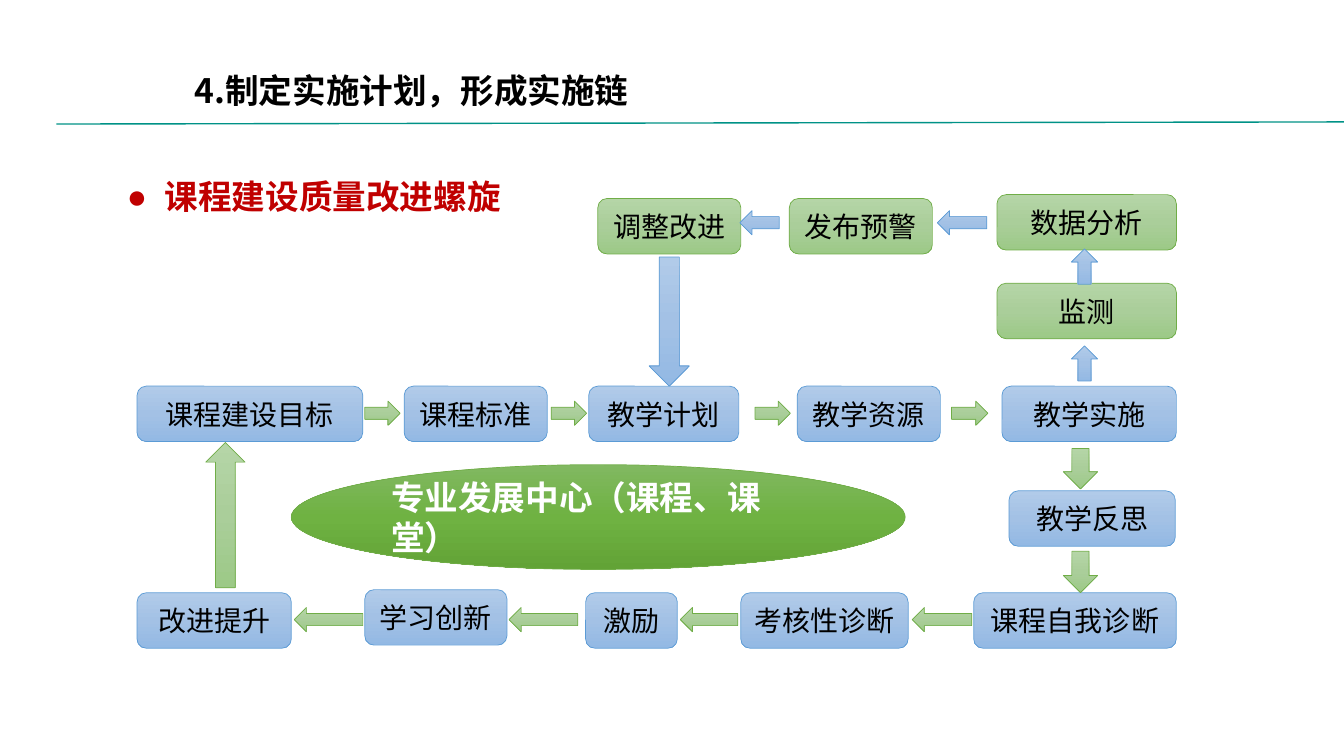
from copy import deepcopy

from lxml import etree
from pptx import Presentation
from pptx.dml.color import RGBColor
from pptx.enum import shapes, text
from pptx.oxml import ns
from pptx.util import Pt

CJK = "Noto Sans CJK SC"
BOX_HEIGHT = 39.6
ARROW_HEIGHT = 17.3
KIND = shapes.MSO_SHAPE
LEFT, RIGHT, UP, DOWN = KIND.LEFT_ARROW, KIND.RIGHT_ARROW, KIND.UP_ARROW, KIND.DOWN_ARROW

# Outline, then gradient from top to bottom
BLUE = ("5B9BD5", "B1CBE9", "A3C1E5", "93B9E4")
GREEN = ("70AD47", "B5D5A7", "AACE9A", "9CC987")
DEEP_GREEN = ("70AD47", "81B861", "6FB242", "62A336")

TITLE = "4.制定实施计划，形成实施链"
HEADING = "课程建设质量改进螺旋"
CENTRE = "专业发展中心（课程、课堂）"

# Colours, top, then (text, left, width)
BOX_ROWS = [
    (BLUE, 275.8, [("课程建设目标", 97.9, 161.3), ("课程标准", 288.7, 102.2),
                   ("教学计划", 420.5, 107.3), ("教学资源", 569.5, 102.2),
                   ("教学实施", 715.7, 124.6)]),
    (BLUE, 350.6, [("教学反思", 720.7, 118.8)]),
    (BLUE, 423.4, [("课程自我诊断", 695.5, 144.7), ("考核性诊断", 529.2, 119.5),
                   ("激励", 418.3, 65.5), ("改进提升", 97.9, 110.2)]),
    (BLUE, 421.2, [("学习创新", 260.6, 101.5)]),
    (GREEN, 202.3, [("监测", 712.1, 128.2)]),
    (GREEN, 139, [("数据分析", 712.1, 128.2)]),
    (GREEN, 141.8, [("发布预警", 563.8, 102.2), ("调整改进", 427, 102.2)]),
]
# Kind, colours, middle height, then (left, width)
ARROW_ROWS = [
    (RIGHT, GREEN, 295.2, [(260.6, 25.2), (393.8, 25.2), (539.3, 25.2), (679.7, 25.9)]),
    (LEFT, GREEN, 442.6, [(651.6, 42.5), (486, 41), (363.6, 49), (210.2, 49)]),
    (LEFT, BLUE, 159.1, [(669.6, 35.3), (528.5, 28.1)]),
]
# Kind, colours, middle across, width, then (top, height)
ARROW_COLUMNS = [
    (UP, BLUE, 774.7, 18.7, [(247, 25.2), (177.8, 25.2)]),
    (DOWN, GREEN, 771.8, 24.5, [(320.4, 28.8), (393.8, 29.5)]),
    (DOWN, BLUE, 478.1, 28.8, [(183.6, 92.2)]),
    (UP, GREEN, 161, 28.1, [(316.1, 103.7)]),
]


def colour(value):
    return RGBColor.from_string(value)


def write(box, words, size=20, ink="000000", bold=False, font=CJK,
          align=text.PP_ALIGN.LEFT, anchor=text.MSO_ANCHOR.MIDDLE):
    frame = box.text_frame
    frame.word_wrap = True
    frame.vertical_anchor = anchor
    para = frame.paragraphs[0]
    para.alignment = align
    span = para.add_run()
    span.text = words
    span.font.size = Pt(size)
    span.font.bold = bold
    span.font.name = font
    span.font.color.rgb = colour(ink)
    etree.SubElement(span.font._element, ns.qn("a:ea"), typeface=CJK)
    return para


def draw(page, kind, colours, left, top, width, height):
    """Add a preset shape with a three-stop vertical gradient."""
    shape = page.shapes.add_shape(kind, Pt(left), Pt(top), Pt(width), Pt(height))
    shape.shadow.inherit = False
    outline, *tones = colours
    shape.line.color.rgb = colour(outline)
    shape.line.width = Pt(0.5)
    shape.fill.gradient()
    shape.fill.gradient_angle = 270
    stop_list = shape._element.spPr.find(".//" + ns.qn("a:gsLst"))
    stop_list.insert(1, deepcopy(stop_list[0]))
    for stop, tone, position in zip(shape.fill.gradient_stops, tones, (0, 0.5, 1)):
        stop.color.rgb = colour(tone)
        stop.position = position
    return shape


def add_words(page, words, left, top, width, height, **style):
    box = page.shapes.add_textbox(Pt(left), Pt(top), Pt(width), Pt(height))
    return write(box, words, size=24, bold=True, anchor=text.MSO_ANCHOR.TOP, **style)


def add_bullet(para, mark, indent):
    props = para._p.get_or_add_pPr()
    props.set("marL", str(Pt(indent)))
    props.set("indent", str(-Pt(indent)))
    etree.SubElement(props, ns.qn("a:buFont"), typeface="Arial")
    etree.SubElement(props, ns.qn("a:buChar"), char=mark)


def add_rule(page, start, end):
    rule = page.shapes.add_connector(shapes.MSO_CONNECTOR.STRAIGHT,
                                     *map(Pt, start), *map(Pt, end))
    rule.line.color.rgb = colour("009287")
    rule.line.width = Pt(1)
    etree.SubElement(rule._element.spPr, ns.qn("a:effectLst"))


def main():
    deck = Presentation()
    deck.slide_width, deck.slide_height = Pt(960), Pt(540)
    page = deck.slides.add_slide(deck.slide_layouts[6])

    for colours, top, boxes in BOX_ROWS:
        for words, left, width in boxes:
            box = draw(page, KIND.ROUNDED_RECTANGLE, colours, left, top, width, BOX_HEIGHT)
            write(box, words, align=text.PP_ALIGN.CENTER)

    ellipse = draw(page, KIND.OVAL, DEEP_GREEN, 208.1, 331.9, 438.5, 74.9)
    write(ellipse, CENTRE, size=24, ink="FFFFFF", bold=True)

    for kind, colours, middle, arrows in ARROW_ROWS:
        for left, width in arrows:
            draw(page, kind, colours, left, middle - ARROW_HEIGHT / 2, width, ARROW_HEIGHT)
    for kind, colours, middle, width, arrows in ARROW_COLUMNS:
        for top, height in arrows:
            draw(page, kind, colours, middle - width / 2, top, width, height)

    heading = add_words(page, HEADING, 83.5, 122.4, 399.6, 51.1, ink="C00000", font="Arial")
    add_bullet(heading, "●", 27)
    add_words(page, TITLE, 131.8, 46.1, 416.2, 36)
    add_rule(page, (40.3, 88.6), (961.9, 87.1))
    deck.save("out.pptx")


if __name__ == "__main__":
    main()
